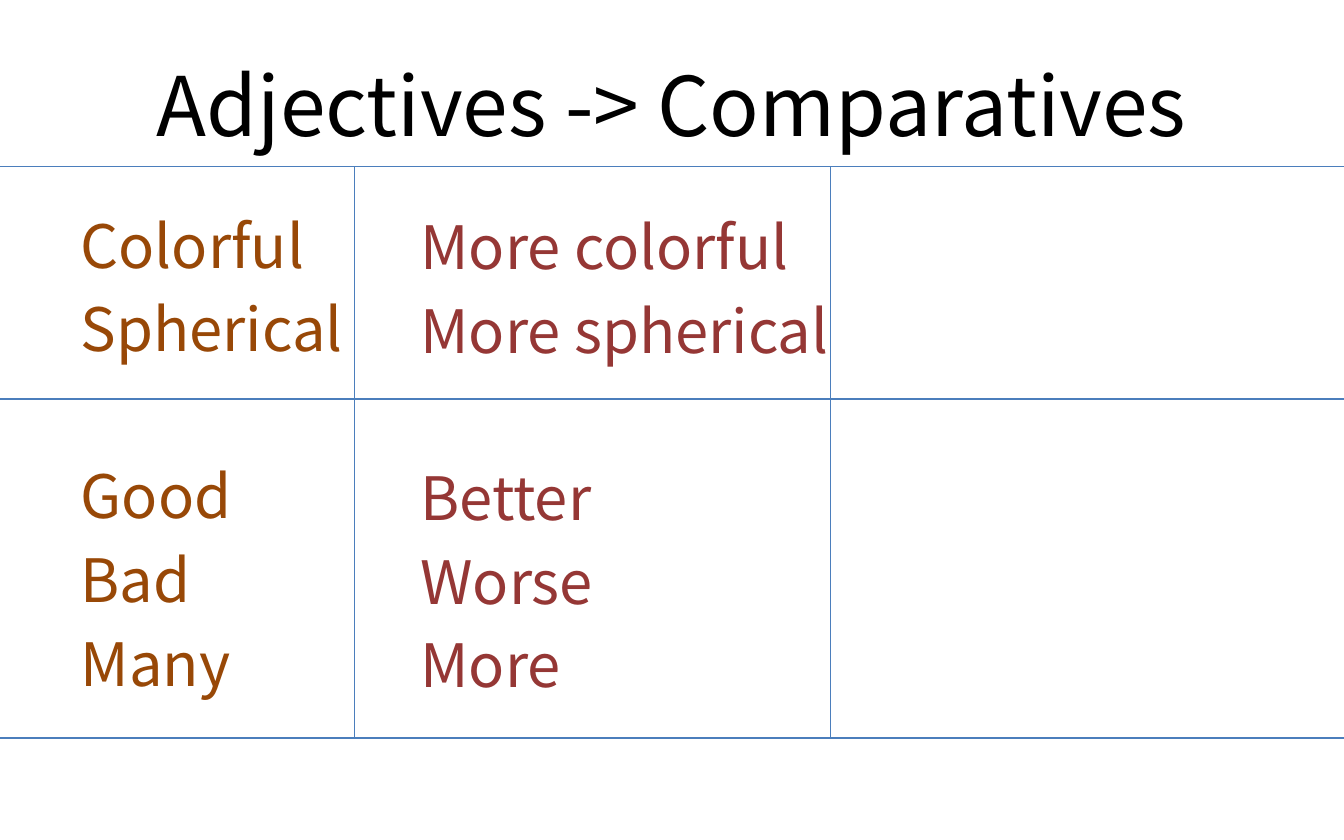
from dataclasses import dataclass

from pptx import Presentation
from pptx import util as u
from pptx.dml.color import RGBColor
from pptx.enum import shapes, text
from pptx.oxml.ns import qn
from lxml import etree


@dataclass(frozen=True)
class Theme:
    font: str = "Noto Sans CJK KR"
    title_color: str = "000000"
    adjective: str = "984807"
    comparative: str = "953735"
    rule: str = "4B7EBC"
    title_size: float = 44
    word_size: float = 32
    line_height: float = 38.4
    word_gap: float = 6.4
    rule_width: float = 0.75


WIDTH, HEIGHT = 10, 6.25
COLUMNS = (0, 2.64, 6.18, WIDTH)  # vertical grid positions, inches
ROWS = (1.24, 2.97, 5.49)         # horizontal grid positions, inches


def write(p, content, *, size, color, font, align=text.PP_ALIGN.LEFT):
    """Put one formatted run into a paragraph without a bullet."""
    p.alignment = align
    pPr = p._p.get_or_add_pPr()
    pPr.set("marL", "0")
    pPr.set("indent", "0")
    etree.SubElement(pPr, qn("a:buNone"))
    r = p.add_run()
    r.text = content
    r.font.size = u.Pt(size)
    r.font.name = font
    r.font.color.rgb = RGBColor.from_string(color)


class Deck:
    def __init__(self, theme):
        self.theme = theme
        self.prs = Presentation()
        self.prs.slide_width = u.Inches(WIDTH)
        self.prs.slide_height = u.Inches(HEIGHT)
        self.slide = self.prs.slides.add_slide(self.prs.slide_layouts[1])

    def place(self, sp, left, top, width, height):
        sp.left, sp.top, sp.width, sp.height = map(
            u.Inches, (left, top, width, height))

    def title(self, content, *box):
        t = self.theme
        sp = self.slide.shapes.title
        self.place(sp, *box)
        tf = sp.text_frame
        tf.vertical_anchor = text.MSO_ANCHOR.MIDDLE
        tf.auto_size = text.MSO_AUTO_SIZE.NONE
        write(tf.paragraphs[0], content, size=t.title_size, font=t.font,
              color=t.title_color, align=text.PP_ALIGN.CENTER)

    def words(self, sp, groups, color, *box):
        """Fill a shape with groups of words, one line apart."""
        t = self.theme
        self.place(sp, *box)
        tf = sp.text_frame
        tf.word_wrap = True
        tf.auto_size = text.MSO_AUTO_SIZE.NONE
        tf.vertical_anchor = text.MSO_ANCHOR.TOP
        tf.margin_top = u.Inches(0.09)
        for g, group in enumerate(groups):
            for i, word in enumerate(group):
                first = g == i == 0
                p = tf.paragraphs[0] if first else tf.add_paragraph()
                gap = t.word_gap
                if i == 0:
                    gap += t.line_height + t.word_gap
                p.line_spacing = u.Pt(t.line_height)
                p.space_before = u.Pt(0 if first else gap)
                write(p, word, size=t.word_size, color=color, font=t.font)

    def body(self, groups, color, *box):
        self.words(self.slide.placeholders[1], groups, color, *box)

    def text_box(self, groups, color, *box):
        sp = self.slide.shapes.add_textbox(0, 0, 0, 0)
        self.words(sp, groups, color, *box)

    def rule(self, x1, y1, x2, y2):
        c = self.slide.shapes.add_connector(
            shapes.MSO_CONNECTOR.STRAIGHT, *map(u.Inches, (x1, y1, x2, y2)))
        c.line.color.rgb = RGBColor.from_string(self.theme.rule)
        c.line.width = u.Pt(self.theme.rule_width)
        etree.SubElement(c._element.spPr, qn("a:effectLst"))


def main():
    theme = Theme()
    deck = Deck(theme)

    # Title and the two word lists
    deck.title("Adjectives -> Comparatives", 0.5, 0.25, 9, 1.04)
    deck.body([("Colorful", "Spherical"), ("Good", "Bad", "Many")],
              theme.adjective, 0.5, 1.46, 9, 4.12)
    deck.text_box([("More colorful", "More spherical"),
                   ("Better", "Worse", "More")],
                  theme.comparative, 3.03, 1.47, 6.64, 4.12)

    # Grid rules
    for y in ROWS:
        deck.rule(COLUMNS[0], y, COLUMNS[-1], y)
    for x in COLUMNS[1:-1]:
        deck.rule(x, ROWS[0], x, ROWS[-1])

    deck.prs.save("out.pptx")


if __name__ == "__main__":
    main()
